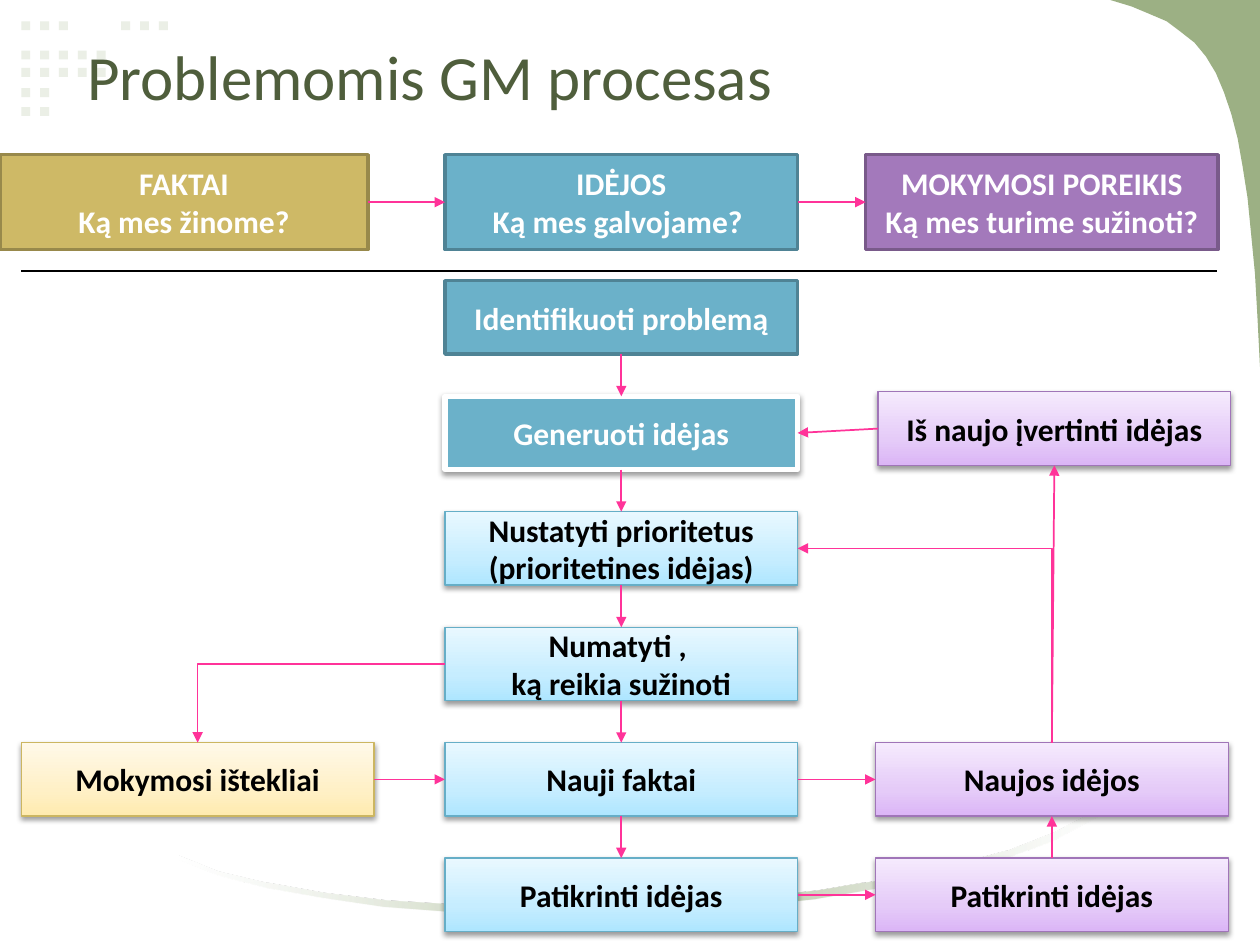
import pptx
import pptx.util
import pptx.dml.color
import pptx.enum.shapes
import pptx.enum.text
import pptx.oxml.ns
from dataclasses import dataclass
from lxml import etree

Cm, Pt = pptx.util.Cm, pptx.util.Pt
RGB = pptx.dml.color.RGBColor.from_string
qn = pptx.oxml.ns.qn
LINK = pptx.enum.shapes.MSO_CONNECTOR
ALIGN = pptx.enum.text.PP_ALIGN
TOP, LEFT, BASE, RIGHT = range(4)


@dataclass(frozen=True)
class Theme:
    font: str = "Calibri"
    title: int = 36
    body: int = 18
    ink: str = "000000"
    white: str = "FFFFFF"
    head: str = "4F5E3C"
    dot: str = "EBEFE6"
    leaf: str = "9CB084"
    arrow: str = "FF3399"
    # solid boxes: fill, line
    gold: tuple = ("CEB966", "98894B")
    blue: tuple = ("6BB1C9", "4F8395")
    plum: tuple = ("A379BB", "795A8A")
    # shaded boxes: three stops from the bottom up, then line
    sand: tuple = ("FFEBAF", "FFF0C6", "FFF9E9", "CCB661")
    sky: tuple = ("AEE6FF", "C6EDFF", "E9F8FF", "66AEC7")
    lilac: tuple = ("DBB5F6", "E5CBF8", "F5EAFD", "A075B8")


T = Theme()

# Outlines in cm, relative to their boxes
CORNER = [(0, 0), (3.02, 0), (3.02, 7.39), (2.97, 6.4), (2.92, 5.51), (2.84, 4.7),
          (2.77, 3.99), (2.67, 3.35), (2.57, 2.79), (2.44, 2.29), (2.29, 1.85),
          (2.13, 1.47), (1.93, 1.14), (1.7, 0.86), (1.42, 0.64), (1.14, 0.43),
          (0.79, 0.28), (0.43, 0.13)]
SWOOSH = [(19.05, 0.18), (18.42, 0.64), (17.6, 1.07), (16.59, 1.45), (15.44, 1.75),
          (14.17, 2.01), (12.8, 2.24), (11.35, 2.39), (9.88, 2.49), (8.38, 2.54),
          (6.91, 2.54), (5.46, 2.49), (4.11, 2.39), (2.87, 2.21), (1.73, 2.01),
          (0.76, 1.75), (0, 1.45), (0, 1.37), (0.79, 1.68), (1.78, 1.91),
          (2.92, 2.11), (4.19, 2.26), (5.56, 2.34), (6.99, 2.39), (8.48, 2.39),
          (9.96, 2.31), (11.46, 2.21), (12.88, 2.06), (14.25, 1.83), (15.52, 1.57),
          (16.66, 1.27), (17.65, 0.89), (18.44, 0.48), (19.05, 0)]


def write(frame, text, size=T.body, color=T.ink, bold=True, align=ALIGN.CENTER, wrap=False):
    frame.word_wrap = wrap
    frame.vertical_anchor = pptx.enum.text.MSO_ANCHOR.MIDDLE
    frame.text = text
    for para in frame.paragraphs:
        para.alignment = align
        for run in para.runs:
            run.font.name, run.font.size, run.font.bold = T.font, Pt(size), bold
            run.font.color.rgb = RGB(color)


def paint(shape, color):
    shape.shadow.inherit = False
    shape.fill.solid()
    shape.fill.fore_color.rgb = RGB(color)
    shape.line.fill.background()


def tint(parent, color, alpha=100):
    node = etree.SubElement(parent, qn("a:srgbClr"), val=color)
    if alpha < 100:
        etree.SubElement(node, qn("a:alpha"), val=str(alpha * 1000))


def blend(shape, stops, angle):
    """Fill with stops of (percent, colour, opacity)."""
    shape.fill.gradient()
    shape.fill.gradient_angle = angle
    group = shape.element.spPr.find(".//" + qn("a:gsLst"))
    for old in list(group):
        group.remove(old)
    for pos, color, alpha in stops:
        tint(etree.SubElement(group, qn("a:gs"), pos=str(pos * 1000)), color, alpha)


def shade(shape):
    drop = etree.SubElement(shape.element.spPr.find(qn("a:effectLst")), qn("a:outerShdw"),
                            blurRad="40000", dist="20000", dir="5400000", rotWithShape="0")
    tint(drop, T.ink, 38)


def rect(slide, box):
    return slide.shapes.add_shape(pptx.enum.shapes.MSO_SHAPE.RECTANGLE, *map(Cm, box))


def card(slide, box, text, look, edge=None, width=2, lift=False):
    """A box with a solid look (two colours) or a shaded one (four)."""
    shape = rect(slide, box)
    paint(shape, look[0])
    solid = len(look) == 2
    if not solid:
        blend(shape, zip((0, 35, 100), look[:3], (100,) * 3), 90)
    shape.line.color.rgb = RGB(edge or look[-1])
    shape.line.width = Pt(width if solid else 0.75)
    if lift or not solid:
        shade(shape)
    write(shape.text_frame, text, color=T.white if solid else T.ink)
    return shape


def rule(slide, start, end, color, kind=LINK.STRAIGHT):
    line = slide.shapes.add_connector(kind, *map(Cm, start + end))
    line.line.color.rgb = RGB(color)
    line.line.width = Pt(1)
    etree.SubElement(line.element.spPr, qn("a:effectLst"))
    return line


def join(slide, a, side, b, other, bent=False, tip="tailEnd"):
    line = rule(slide, (0, 0), (1, 1), T.arrow, LINK.ELBOW if bent else LINK.STRAIGHT)
    line.begin_connect(a, side)
    line.end_connect(b, other)
    spec = line.element.spPr
    if bent:
        spec.find(qn("a:prstGeom")).set("prst", "bentConnector2")
    etree.SubElement(spec.find(qn("a:ln")), qn("a:" + tip), type="triangle")


def trace(slide, box, points):
    x, y = box[:2]
    pts = [(Cm(x + dx), Cm(y + dy)) for dx, dy in points]
    pen = slide.shapes.build_freeform(*pts[0], scale=1.0)
    pen.add_line_segments(pts[1:], close=True)
    shape = pen.convert_to_shape()
    paint(shape, T.leaf)
    return shape


def dots(slide, box):
    x, y = box[:2]
    rows = [(0, (0, 1, 2, 5.3, 6.3, 7.3)), (0.59, range(5)), (0.94, range(5)),
            (1.35, range(2)), (1.73, range(2))]
    for dy, cols in rows:
        for col in cols:
            paint(rect(slide, (x + 0.38 * col, y + dy, 0.18, 0.18)), T.dot)


def decor(slide, box):
    x, y, w, h = box
    dots(slide, (x + 0.43, y + 0.43, 2.95, 1.91))
    trace(slide, (x + w - 3.02, y, 3.02, 7.39), CORNER)
    curve = trace(slide, (x + 3.61, y + 15.88, 19.05, 2.54), SWOOSH)
    blend(curve, [(0, T.white, 30), (50, T.leaf, 100), (100, T.white, 30)], 0)


def title(slide, box, text):
    head = slide.shapes.title
    head.left, head.top, head.width, head.height = map(Cm, box)
    write(head.text_frame, text, T.title, T.head, bold=False, align=ALIGN.LEFT, wrap=True)
    slide.shapes.element.append(head.element)  # above the decoration


def heads(slide, box):
    x, y, w, h = box
    facts = card(slide, (x, y, 7.42, h), "FAKTAI\nKą mes žinome?", T.gold)
    ideas = card(slide, (x + 8.97, y, 7.11, h), "IDĖJOS\nKą mes galvojame? ", T.blue)
    needs = card(slide, (x + w - 7.11, y, 7.11, h),
                 "MOKYMOSI POREIKIS\nKą mes turime sužinoti?", T.plum)
    join(slide, facts, RIGHT, ideas, LEFT)
    join(slide, ideas, RIGHT, needs, LEFT)
    rule(slide, (x + 0.43, y + 2.34), (x + w - 0.02, y + 2.34), T.ink)


def flow(slide, box):
    x, y, w, h = box
    wide, tall = 7.11, 1.48
    step = (h - tall) / 5
    mid, far = x + 8.54, x + 17.22
    # Middle column
    look = {"edge": T.white, "width": 3, "lift": True}
    steps = [("Identifikuoti problemą", T.blue, {}), ("Generuoti idėjas", T.blue, look),
             ("Nustatyti prioritetus\n(prioritetines idėjas)", T.sky, {}),
             ("Numatyti , \nką reikia sužinoti", T.sky, {}),
             ("Nauji faktai", T.sky, {}), ("Patikrinti idėjas", T.sky, {})]
    main = [card(slide, (mid, y + i * step, wide, tall), text, tone, **more)
            for i, (text, tone, more) in enumerate(steps)]
    first, make, rank, plan, facts, check = main
    # Side boxes
    tools = card(slide, (x, y + 4 * step, wide, tall), "Mokymosi ištekliai", T.sand)
    fresh = card(slide, (far, y + 4 * step, wide, tall), "Naujos idėjos", T.lilac)
    test = card(slide, (far, y + 5 * step, wide, tall), "Patikrinti idėjas", T.lilac)
    again = card(slide, (far + 0.05, y + 2.24, wide, tall), "Iš naujo įvertinti idėjas", T.lilac)
    # Arrows
    for a, b in zip(main, main[1:]):
        join(slide, a, BASE, b, TOP)
    for a, b in ((tools, facts), (facts, fresh), (check, test)):
        join(slide, a, RIGHT, b, LEFT)
    for a, b in ((test, fresh), (fresh, again)):
        join(slide, a, TOP, b, BASE)
    join(slide, again, LEFT, make, RIGHT)
    join(slide, plan, LEFT, tools, TOP, bent=True)
    join(slide, rank, RIGHT, fresh, TOP, bent=True, tip="headEnd")


def main():
    deck = pptx.Presentation()
    deck.slide_width, deck.slide_height = Cm(25.4), Cm(19.05)
    slide = deck.slides.add_slide(deck.slide_layouts[5])
    decor(slide, (0, 0, 25.4, 19.05))
    heads(slide, (0, 3.12, 24.56, 1.91))
    flow(slide, (0.43, 5.66, 24.38, 13.12))
    title(slide, (1.5, 0.13, 22.86, 2.79), "Problemomis GM procesas")
    deck.save("out.pptx")


if __name__ == "__main__":
    main()
